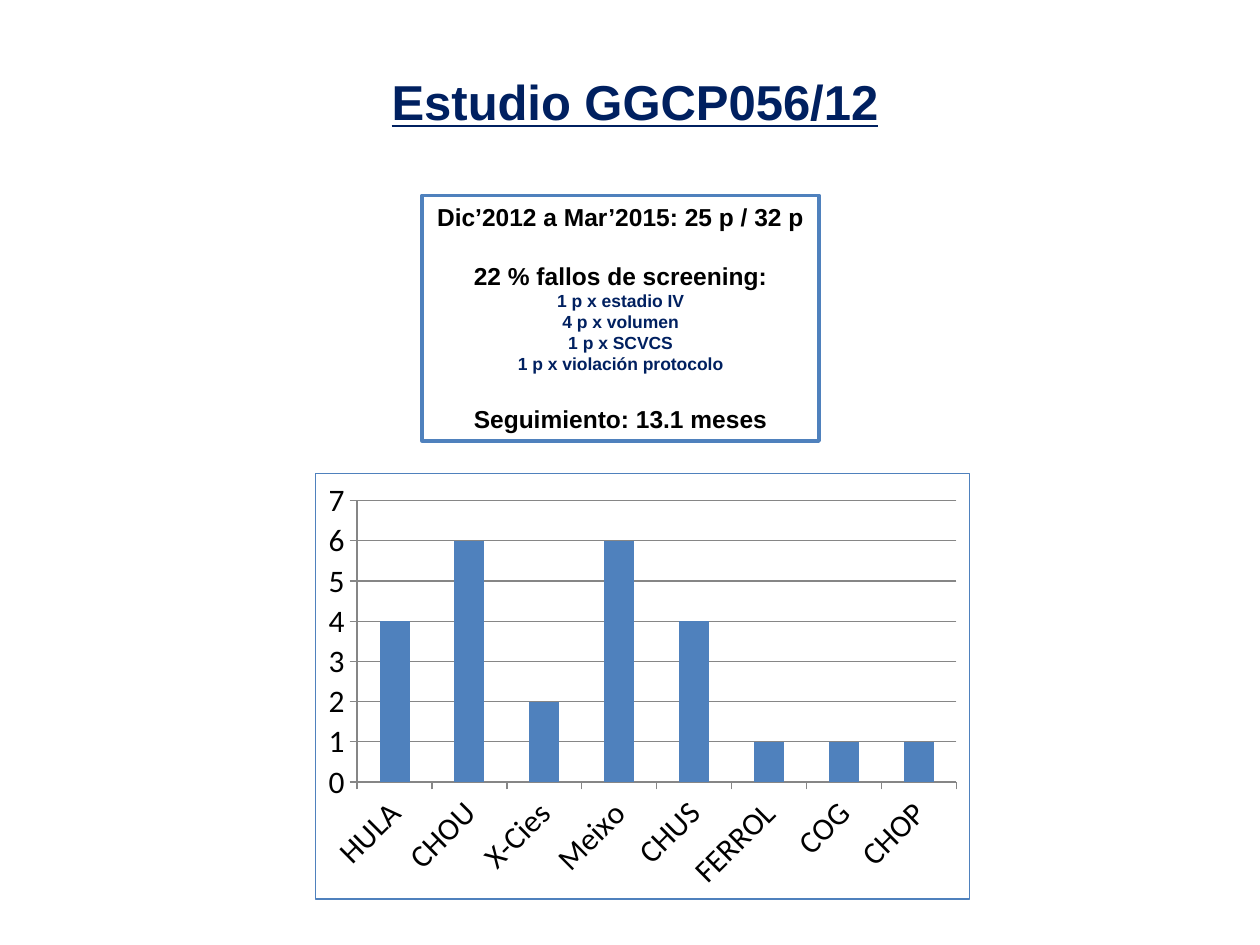
import dataclasses

import pptx
import pptx.chart.data
import pptx.dml.color
import pptx.enum.chart
import pptx.enum.shapes
import pptx.enum.text
import pptx.oxml
import pptx.oxml.ns
import pptx.util

Inches = pptx.util.Inches
Pt = pptx.util.Pt
RGB = pptx.dml.color.RGBColor


@dataclasses.dataclass(frozen=True)
class Theme:
    """Colours, fonts and type sizes of the slide."""
    navy: str = "002060"
    blue: str = "4F81BD"
    black: str = "000000"
    white: str = "FFFFFF"
    grey: str = "868686"
    sans: str = "Arial"
    plot: str = "Calibri"
    title: int = 28
    body: int = 14
    small: int = 10
    label: int = 18
    gap: int = 17


THEME = Theme()
FACTS = [
    ("Dic’2012 a Mar’2015: 25 p / 32 p", True, False),
    ("22 % fallos de screening:", True, True),
    ("1 p x estadio IV", False, False),
    ("4 p x volumen", False, False),
    ("1 p x SCVCS", False, False),
    ("1 p x violación protocolo", False, False),
    ("Seguimiento: 13.1 meses", True, True),
]
COUNTS = {"HULA": 4, "CHOU": 6, "X-Cies": 2, "Meixo": 6,
          "CHUS": 4, "FERROL": 1, "COG": 1, "CHOP": 1}


def style(font, size, color, name, bold=False):
    """Set the look of a font."""
    font.size = Pt(size)
    font.name = name
    font.bold = bold
    font.color.rgb = RGB.from_string(color)


def add_title(slide, box):
    """Place the underlined title in the box."""
    frame = slide.shapes.add_textbox(*box).text_frame
    frame.word_wrap = False
    line = frame.paragraphs[0]
    line.text = "Estudio GGCP056/12"
    style(line.font, THEME.title, THEME.navy, THEME.sans, True)
    line.font.underline = True


def add_facts(slide, box):
    """Place the framed summary of the study in the box."""
    panel = slide.shapes.add_shape(pptx.enum.shapes.MSO_SHAPE.RECTANGLE, *box)
    panel.shadow.inherit = False
    panel.fill.solid()
    panel.fill.fore_color.rgb = RGB.from_string(THEME.white)
    panel.line.color.rgb = RGB.from_string(THEME.blue)
    panel.line.width = Pt(2)
    frame = panel.text_frame
    frame.word_wrap = True
    frame.vertical_anchor = pptx.enum.text.MSO_ANCHOR.TOP
    for i, (text, major, apart) in enumerate(FACTS):
        line = frame.add_paragraph() if i else frame.paragraphs[0]
        line.text = text
        line.alignment = pptx.enum.text.PP_ALIGN.CENTER
        line.space_before = Pt(THEME.gap if apart else 0)
        size, color = (THEME.body, THEME.black) if major else (THEME.small, THEME.navy)
        style(line.font, size, color, THEME.sans, True)


def add_border(chart):
    """Draw a thin frame around the chart."""
    frame = pptx.oxml.parse_xml(
        f'<c:spPr {pptx.oxml.ns.nsdecls("c", "a")}><a:ln w="{Pt(0.75)}"><a:solidFill>'
        f'<a:srgbClr val="{THEME.blue}"/></a:solidFill></a:ln></c:spPr>')
    chart.element.find(pptx.oxml.ns.qn("c:chart")).addnext(frame)


def add_counts(slide, box):
    """Place the column chart of patients per centre in the box."""
    data = pptx.chart.data.CategoryChartData()
    data.categories = list(COUNTS)
    data.add_series("Series 1", list(COUNTS.values()))
    kind = pptx.enum.chart.XL_CHART_TYPE.COLUMN_STACKED
    chart = slide.shapes.add_chart(kind, *box, data).chart
    chart.has_legend = False
    chart.has_title = False
    style(chart.font, THEME.label, THEME.black, THEME.plot)
    add_border(chart)
    plot = chart.plots[0]
    plot.gap_width = 150
    plot.overlap = 100
    plot.vary_by_categories = False
    fill = plot.series[0].format.fill
    fill.solid()
    fill.fore_color.rgb = RGB.from_string(THEME.blue)
    cats, vals = chart.category_axis, chart.value_axis
    vals.minimum_scale, vals.maximum_scale, vals.major_unit = 0, 7, 1
    vals.has_major_gridlines = True
    for axis in (cats, vals):
        axis.major_tick_mark = pptx.enum.chart.XL_TICK_MARK.OUTSIDE
        style(axis.tick_labels.font, THEME.label, THEME.black, THEME.plot)
    for part in (cats, vals, vals.major_gridlines):
        part.format.line.color.rgb = RGB.from_string(THEME.grey)
        part.format.line.width = Pt(0.75)
    turn = chart.element.xpath(".//c:catAx/c:txPr/a:bodyPr")[0]
    turn.set("rot", str(-45 * 60000))


def main():
    """Build and save the slide."""
    deck = pptx.Presentation()
    deck.slide_width, deck.slide_height = Inches(10), Inches(7.5)
    slide = deck.slides.add_slide(deck.slide_layouts[6])
    add_title(slide, [Inches(n) for n in (3.01, 0.52, 4.11, 0.57)])
    add_counts(slide, [Inches(n) for n in (2.5, 3.75, 5.2, 3.39)])
    add_facts(slide, [Inches(n) for n in (3.35, 1.55, 3.15, 1.95)])
    deck.save("out.pptx")


if __name__ == "__main__":
    main()
